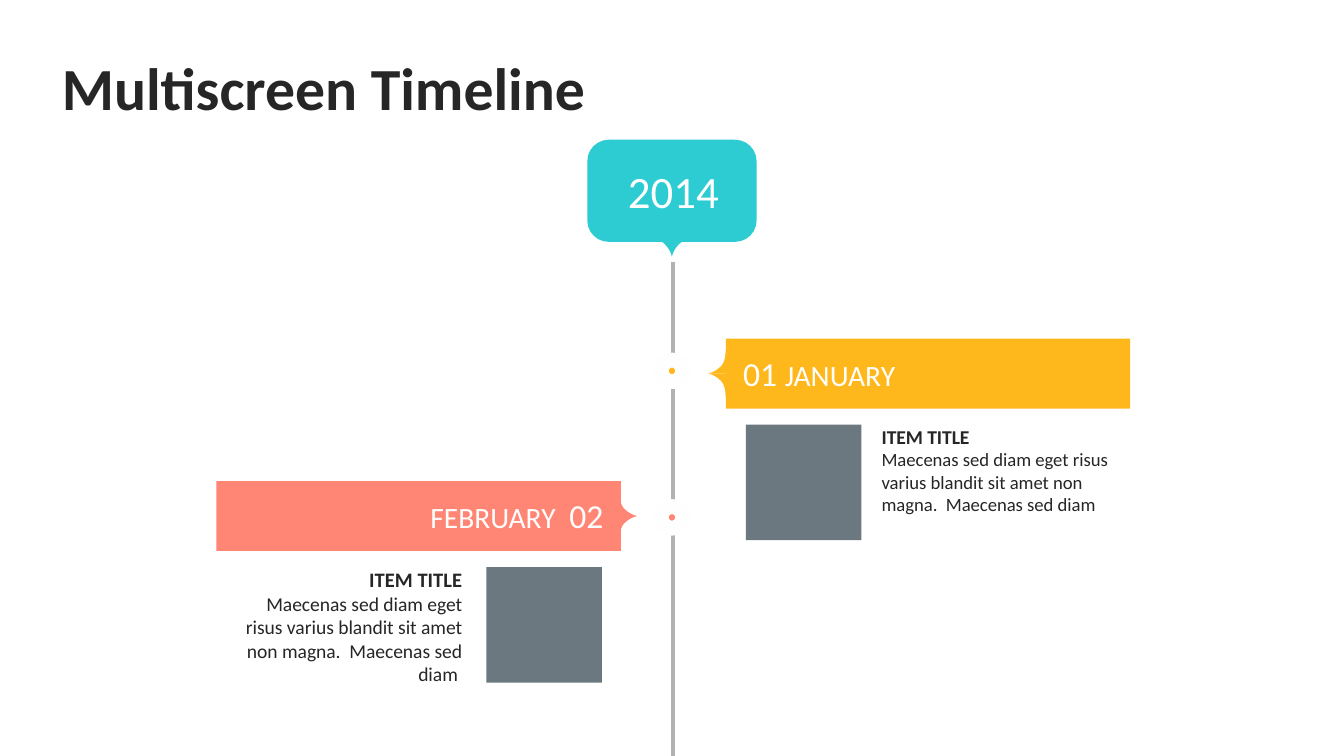
from lxml import etree
from pptx import Presentation
from pptx.dml.color import RGBColor
from pptx.enum.shapes import MSO_CONNECTOR, MSO_SHAPE
from pptx.enum.text import MSO_ANCHOR as Anchor, PP_ALIGN as Align
from pptx.oxml.ns import qn
from pptx.util import Inches, Pt

COLORS = {
    "january": "FFB81C", "february": "FF8674", "year": "2DCCD3",
    "axis": "B3B2B2", "white": "FFFEFE", "ink": "262626", "thumb": "2F3F4A",
}

# 16:9 page
prs = Presentation()
prs.slide_width = Inches(10)
prs.slide_height = Inches(10 * 9 / 16)
slide = prs.slides.add_slide(prs.slide_layouts[5])
shapes = slide.shapes


def paint(shape, color):
    shape.shadow.inherit = False
    shape.fill.solid()
    shape.fill.fore_color.rgb = RGBColor.from_string(COLORS[color])
    shape.line.fill.background()
    return shape


def write(box, paragraphs, color, align=Align.LEFT, anchor=Anchor.MIDDLE):
    """Each paragraph is a list of (text, size, bold) runs."""
    frame = box.text_frame
    frame_format = {"word_wrap": True, "vertical_anchor": anchor, "margin_left": 0,
                    "margin_right": 0, "margin_top": 0, "margin_bottom": 0}
    for name, value in frame_format.items():
        setattr(frame, name, value)
    for i, runs in enumerate(paragraphs):
        paragraph = frame.add_paragraph() if i else frame.paragraphs[0]
        paragraph.alignment = align
        for text, size, bold in runs:
            run = paragraph.add_run()
            run.text = text
            run.font.color.rgb = RGBColor.from_string(COLORS[color])
            for name, value in {"name": "Calibri", "size": Pt(size), "bold": bold}.items():
                setattr(run.font, name, value)


# Title
title = shapes.title
for name, value in {"left": 0.46, "top": 0.4, "width": 9.1, "height": 0.52}.items():
    setattr(title, name, Inches(value))
write(title, [[("Multiscreen Timeline", 32, True)]], "ink", anchor=Anchor.BOTTOM)
title.text_frame.paragraphs[0].line_spacing = 0.9

# Vertical axis, running off the bottom edge
axis = shapes.add_connector(MSO_CONNECTOR.STRAIGHT, Inches(5.01), Inches(1.95),
                            Inches(5.01), Inches(5.65))
axis.line.color.rgb = RGBColor.from_string(COLORS["axis"])
axis.line.width = Pt(2)
etree.SubElement(axis._element.spPr, qn("a:effectLst"))

# Year badge
badge = paint(shapes.add_shape(MSO_SHAPE.ROUNDED_RECTANGLE, Inches(4.37), Inches(1.04),
                               Inches(1.26), Inches(0.76)), "year")
badge.adjustments[0] = 0.21
year = shapes.add_textbox(Inches(4.57), Inches(1.16), Inches(0.88), Inches(0.52))
write(year, [[("2014", 24, False)]], "white", Align.CENTER)

# Month entries: bar, marker on the axis, thumbnail and description
blurb = "Maecenas sed diam eget risus varius blandit sit amet non magna.  Maecenas sed diam"
months = [
    {"color": "january", "align": Align.LEFT, "top": 2.52, "bar": 5.4, "label": 5.53,
     "heading": [("01 ", 18, False), ("JANUARY", 15.8, False)], "marker": 2.68,
     "thumb": 5.55, "text": 6.56, "sizes": (10.5, 10), "blurb": blurb},
    {"color": "february", "align": Align.RIGHT, "top": 3.58, "bar": 1.61, "label": 1.63,
     "heading": [("FEBRUARY  ", 15.8, False), ("02", 18, False)], "marker": 3.77,
     "thumb": 3.62, "text": 1.71, "sizes": (11, 10.5), "blurb": blurb + " "},
]
for month in months:
    top, color, align = month["top"], month["color"], month["align"]
    paint(shapes.add_shape(MSO_SHAPE.RECTANGLE, Inches(month["bar"]), Inches(top),
                           Inches(3.01), Inches(0.52)), color)
    label = shapes.add_textbox(Inches(month["label"]), Inches(top + 0.08),
                               Inches(2.86), Inches(0.35))
    write(label, [month["heading"]], "white", align)

    marker = paint(shapes.add_shape(MSO_SHAPE.OVAL, Inches(4.92), Inches(month["marker"]),
                                    Inches(0.16), Inches(0.16)), color)
    marker.line.color.rgb = RGBColor.from_string(COLORS["white"])
    marker.line.width = Pt(8)

    thumb = paint(shapes.add_shape(MSO_SHAPE.RECTANGLE, Inches(month["thumb"]),
                                   Inches(top + 0.64), Inches(0.86), Inches(0.86)), "thumb")
    thumb_color = thumb._element.spPr.find(qn("a:solidFill"))[0]
    etree.SubElement(thumb_color, qn("a:alpha"), val="70000")

    item = shapes.add_textbox(Inches(month["text"]), Inches(top + 0.64),
                              Inches(1.73), Inches(1.01))
    title_size, blurb_size = month["sizes"]
    write(item, [[("ITEM TITLE", title_size, True)], [(month["blurb"], blurb_size, False)]],
          "ink", align, Anchor.TOP)

# Curved pointers: (depth behind the tip, distance from its axis) of two Bezier arcs
arcs = [[(0.13, 0.17), (0.13, 0.17), (0.13, 0.08), (0.09, 0.05)],
        [(0.09, 0.05), (0.05, 0.01), (0, 0), (0, 0)]]
outline = [(0.17, 0), (0.17, 0.17)]
for arc in arcs:
    for step in range(9):
        t = step / 8
        weights = ((1 - t) ** 3, 3 * t * (1 - t) ** 2, 3 * t ** 2 * (1 - t), t ** 3)
        outline.append(tuple(sum(w * point[k] for w, point in zip(weights, arc))
                             for k in (0, 1)))

# Tip position and direction from the tip back to its box
pointers = [("year", 5, 1.91, 0, -1), ("january", 5.27, 2.78, 1, 0),
            ("february", 4.74, 3.84, -1, 0)]
for color, tip_x, tip_y, dx, dy in pointers:
    for side in (1, -1):
        points = [(Inches(tip_x + dx * depth + dy * side * across),
                   Inches(tip_y + dy * depth + dx * side * across))
                  for depth, across in outline]
        builder = shapes.build_freeform(*points[0])
        builder.add_line_segments(points[1:], close=True)
        paint(builder.convert_to_shape(), color)

prs.save("out.pptx")
